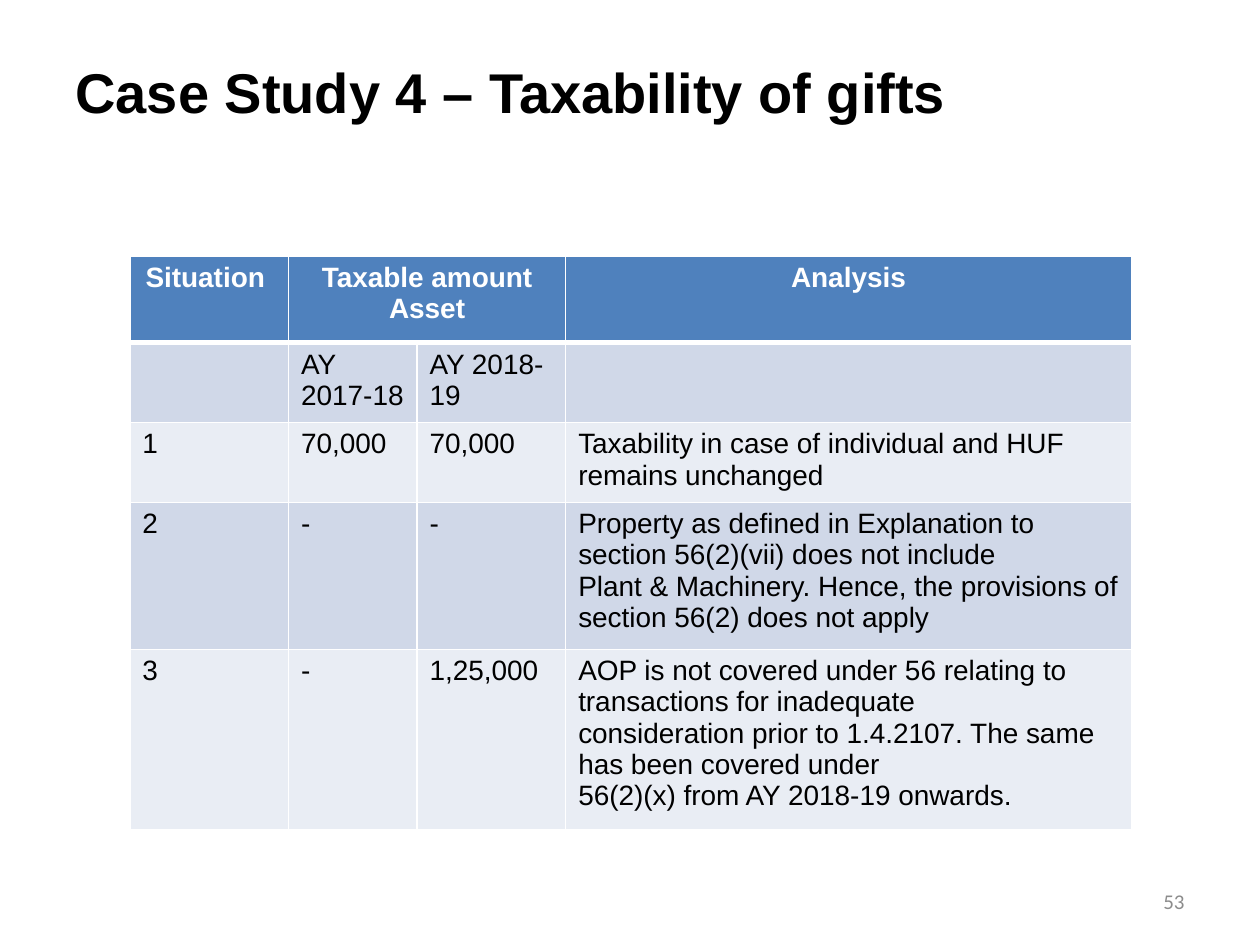
from dataclasses import dataclass

from lxml import etree
from pptx import Presentation
from pptx.dml.color import RGBColor
from pptx.enum.text import MSO_ANCHOR, PP_ALIGN
from pptx.oxml.ns import qn
from pptx.util import Inches, Pt

LEFT, CENTER, RIGHT = PP_ALIGN.LEFT, PP_ALIGN.CENTER, PP_ALIGN.RIGHT
MIDDLE = MSO_ANCHOR.MIDDLE
BLACK = RGBColor(0x00, 0x00, 0x00)
WHITE = RGBColor(0xFF, 0xFF, 0xFF)
GREY = RGBColor(0x8C, 0x8C, 0x8C)
HEADER_BLUE = RGBColor(0x4F, 0x81, 0xBD)
BAND_DARK = RGBColor(0xD0, 0xD8, 0xE8)
BAND_LIGHT = RGBColor(0xE9, 0xED, 0xF4)

COLUMN_WIDTHS = (1.26, 1.02, 1.18, 4.49)
ROW_HEIGHTS = (0.69, 0.59, 0.59, 1.09, 1.33)
ROWS = (
    ("Situation ", "Taxable amount\nAsset", "", "Analysis"),
    ("", "AY 2017-18", "AY 2018-19", ""),
    ("1", "70,000", "70,000",
     "Taxability in case of individual and HUF remains unchanged"),
    ("2", "-", "-",
     "Property as defined in Explanation to section 56(2)(vii) does not include\n"
     "Plant & Machinery. Hence, the provisions of section 56(2) does not apply"),
    ("3", "-", "1,25,000",
     "AOP is not covered under 56 relating to transactions for inadequate\n"
     "consideration prior to 1.4.2107. The same has been covered under\n"
     "56(2)(x) from AY 2018-19 onwards."),
)


@dataclass(frozen=True)
class TextStyle:
    size: int
    color: RGBColor
    bold: bool = False
    alignment: PP_ALIGN = LEFT
    font: str = "Arial"


@dataclass(frozen=True)
class Label:
    text: str
    left: float
    top: float
    width: float
    height: float
    style: TextStyle


HEADER_STYLE = TextStyle(16, WHITE, True, CENTER)
BODY_STYLE = TextStyle(16, BLACK)
LABELS = (
    Label("Case Study 4 – Taxability of gifts", 0.5, 0.3, 9, 0.85,
          TextStyle(32, BLACK, True)),
    Label("53", 7.17, 6.95, 2.33, 0.4,
          TextStyle(12, GREY, alignment=RIGHT, font="Calibri")),
)


def write_text(text_frame, text: str, style: TextStyle) -> None:
    text_frame.text = text
    for paragraph in text_frame.paragraphs:
        paragraph.alignment = style.alignment
        for item in (paragraph, *paragraph.runs):
            item.font.name = style.font
            item.font.size = Pt(style.size)
            item.font.bold = style.bold
            item.font.color.rgb = style.color


def add_label(slide, label: Label) -> None:
    shape = slide.shapes.add_textbox(Inches(label.left), Inches(label.top),
                                     Inches(label.width), Inches(label.height))
    shape.text_frame.word_wrap = True
    shape.text_frame.vertical_anchor = MIDDLE
    write_text(shape.text_frame, label.text, label.style)


def set_borders(cell, top: int, bottom: int) -> None:
    properties = cell._tc.get_or_add_tcPr()
    widths = {"a:lnL": 1, "a:lnR": 1, "a:lnT": top, "a:lnB": bottom}
    for position, (tag, width) in enumerate(widths.items()):
        line = etree.Element(qn(tag), w=str(Pt(width)))
        fill = etree.SubElement(line, qn("a:solidFill"))
        etree.SubElement(fill, qn("a:srgbClr"), val=str(WHITE))
        properties.insert(position, line)


def add_gift_table(slide) -> None:
    table = slide.shapes.add_table(
        len(ROWS), len(COLUMN_WIDTHS), Inches(1.03), Inches(2.03),
        Inches(sum(COLUMN_WIDTHS)), Inches(sum(ROW_HEIGHTS))).table
    for column, width in zip(table.columns, COLUMN_WIDTHS):
        column.width = Inches(width)
    for row, height in zip(table.rows, ROW_HEIGHTS):
        row.height = Inches(height)
    table.cell(0, 1).merge(table.cell(0, 2))
    for row_index, texts in enumerate(ROWS):
        is_header = row_index == 0
        band = BAND_DARK if row_index % 2 else BAND_LIGHT
        for column_index, text in enumerate(texts):
            cell = table.cell(row_index, column_index)
            cell.fill.solid()
            cell.fill.fore_color.rgb = HEADER_BLUE if is_header else band
            set_borders(cell, 3 if row_index == 1 else 1, 3 if is_header else 1)
            write_text(cell.text_frame, text,
                       HEADER_STYLE if is_header else BODY_STYLE)


def main() -> None:
    presentation = Presentation()
    presentation.slide_width = Inches(10)
    presentation.slide_height = Inches(7.5)
    slide = presentation.slides.add_slide(presentation.slide_layouts[6])
    for label in LABELS:
        add_label(slide, label)
    add_gift_table(slide)
    presentation.save("out.pptx")


if __name__ == "__main__":
    main()
